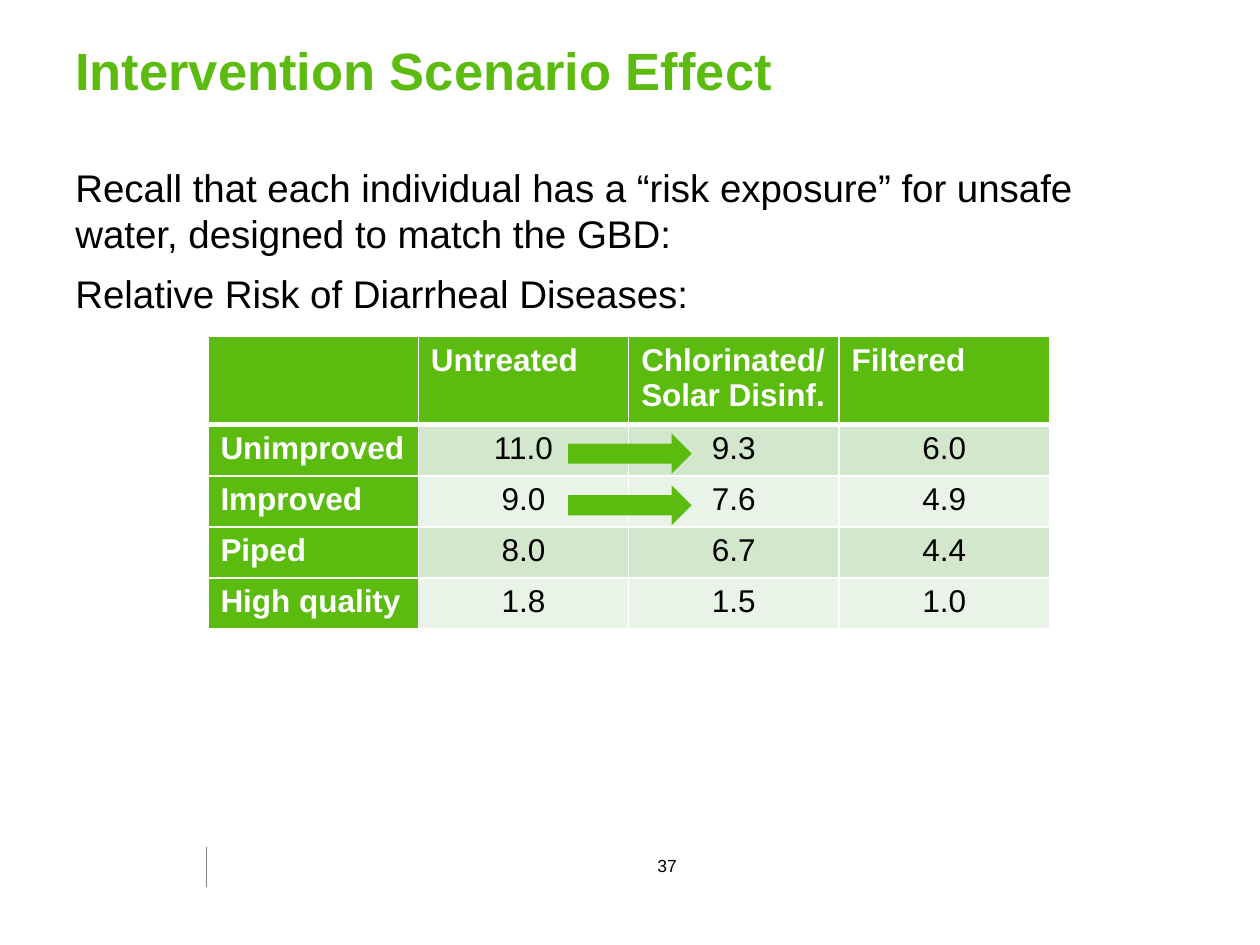
from lxml import etree
from pptx import Presentation
from pptx.dml.color import RGBColor
from pptx.enum.shapes import MSO_CONNECTOR, MSO_SHAPE
from pptx.enum.text import MSO_ANCHOR, PP_ALIGN
from pptx.oxml.ns import qn
from pptx.util import Inches, Pt

LEFT, CENTER = PP_ALIGN.LEFT, PP_ALIGN.CENTER
TOP, MIDDLE = MSO_ANCHOR.TOP, MSO_ANCHOR.MIDDLE
ARROW, STRAIGHT = MSO_SHAPE.RIGHT_ARROW, MSO_CONNECTOR.STRAIGHT

# Content
TITLE = "Intervention Scenario Effect"
BODY = [
    "Recall that each individual has a “risk exposure” for unsafe water, designed to match the GBD:",
    "Relative Risk of Diarrheal Diseases:",
]
RISKS = [
    ["", "Untreated", "Chlorinated/Solar Disinf.", "Filtered"],
    ["Unimproved", "11.0", "9.3", "6.0"],
    ["Improved", "9.0", "7.6", "4.9"],
    ["Piped", "8.0", "6.7", "4.4"],
    ["High quality", "1.8", "1.5", "1.0"],
]
ARROW_ROWS = [1, 2]
PAGE = "37"

THEME = {
    "font": "Arial",
    "green": "5BBB0E", "black": "000000", "white": "FFFFFF", "grey": "808080",
    "bands": ["EAF3E7", "D2E7CC"],
    "title": 30, "body": 22, "table": 18, "page": 10,
}

# Table grid
TABLE_X, TABLE_Y = Inches(1.65), Inches(2.67)
COL_W, HEAD_H, ROW_H = Inches(1.67), Inches(0.65), Pt(29.2)


def rgb(name):
    return RGBColor.from_string(THEME.get(name, name))


def write(tf, lines, size, color, bold=False, align=LEFT, gap=0):
    for i, line in enumerate(lines):
        p = tf.paragraphs[0] if i == 0 else tf.add_paragraph()
        p.alignment = align
        p.space_before = Pt(gap if i else 0)
        r = p.add_run()
        r.text = line
        form = {"name": THEME["font"], "size": Pt(THEME[size]), "bold": bold}
        for key, value in form.items():
            setattr(r.font, key, value)
        r.font.color.rgb = rgb(color)


def text_box(s, box, lines, size, color, wrap=True, anchor=TOP, **form):
    tf = s.shapes.add_textbox(*map(Inches, box)).text_frame
    tf.word_wrap, tf.vertical_anchor = wrap, anchor
    write(tf, lines, size, color, **form)


def border(cell, widths):
    tcPr = cell._tc.get_or_add_tcPr()
    for i, (side, width) in enumerate(widths.items()):
        ln = etree.Element(qn("a:" + side), w=str(Pt(width)))
        fill = etree.SubElement(ln, qn("a:solidFill"))
        etree.SubElement(fill, qn("a:srgbClr"), val=THEME["white"])
        tcPr.insert(i, ln)


def risk_table(s):
    rows, cols = len(RISKS), len(RISKS[0])
    height = HEAD_H + (rows - 1) * ROW_H
    table = s.shapes.add_table(rows, cols, TABLE_X, TABLE_Y, cols * COL_W, height).table
    for col in table.columns:
        col.width = COL_W
    for i, row in enumerate(RISKS):
        table.rows[i].height = ROW_H if i else HEAD_H
        for j, value in enumerate(row):
            cell = table.cell(i, j)
            label = i == 0 or j == 0
            cell.fill.solid()
            cell.fill.fore_color.rgb = rgb("green" if label else THEME["bands"][i % 2])
            border(cell, {"lnL": 1, "lnR": 1, "lnT": 3 if i == 1 else 1,
                          "lnB": 1 if i else 3})
            write(cell.text_frame, [value], "table", "white" if label else "black",
                  bold=label, align=LEFT if label else CENTER)


def main():
    prs = Presentation()
    prs.slide_width, prs.slide_height = Inches(10), Inches(7.5)
    s = prs.slides.add_slide(prs.slide_layouts[6])

    # Footer rule
    rule = s.shapes.add_connector(STRAIGHT, *map(Inches, (1.64, 6.72, 1.64, 7.04)))
    rule.line.color.rgb, rule.line.width = rgb("grey"), Pt(0.25)
    etree.SubElement(rule._element.spPr, qn("a:effectLst"))

    # Title, body and page number
    text_box(s, (0.5, 0.25, 8.96, 0.61), [TITLE], "title", "green", anchor=MIDDLE, bold=True)
    text_box(s, (0.5, 1.25, 9, 4.87), BODY, "body", "black", gap=8)
    text_box(s, (5.11, 6.74, 0.37, 0.27), [PAGE], "page", "black", wrap=False, align=CENTER)

    risk_table(s)

    # Arrows from untreated to chlorinated, one per row
    for row in ARROW_ROWS:
        y = Inches(3.44) + (row - 1) * Inches(0.41)
        sp = s.shapes.add_shape(ARROW, Inches(4.51), y, Inches(0.98), Inches(0.32))
        sp.shadow.inherit = False
        sp.fill.solid()
        sp.fill.fore_color.rgb = rgb("green")
        sp.line.fill.background()

    prs.save("out.pptx")


if __name__ == "__main__":
    main()
